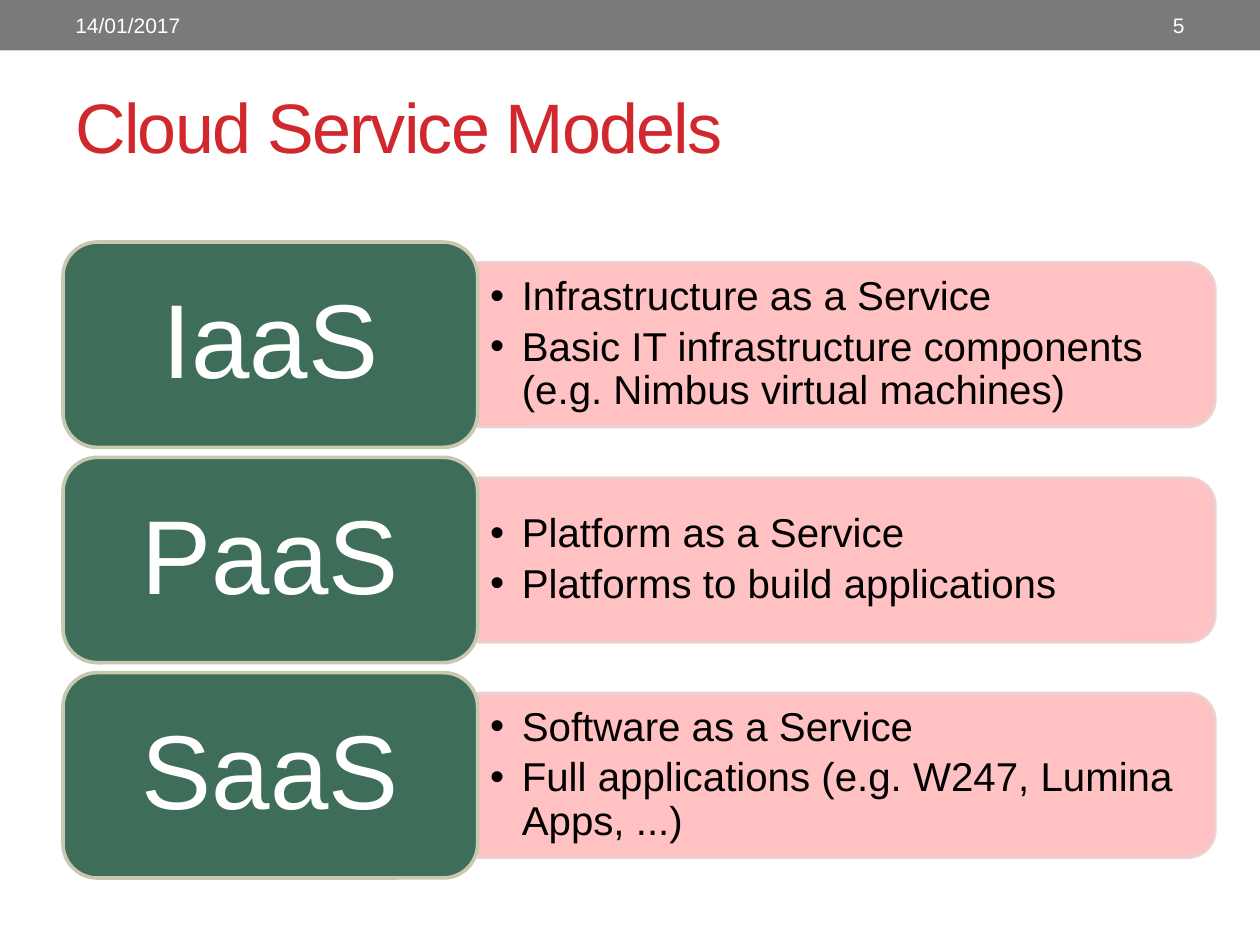
from lxml import etree
from pptx import Presentation
from pptx import util as u
from pptx.dml.color import RGBColor
from pptx.enum import shapes, text
from pptx.oxml.ns import qn

MODELS = [
    ("IaaS", ["Infrastructure as a Service",
              "Basic IT infrastructure components (e.g. Nimbus virtual machines)"]),
    ("PaaS", ["Platform as a Service", "Platforms to build applications"]),
    ("SaaS", ["Software as a Service",
              "Full applications (e.g. W247, Lumina Apps, ...)"]),
]


def color(hex_code):
    return RGBColor.from_string(hex_code)


def add_bullet(paragraph, indent):
    props = paragraph._p.get_or_add_pPr()
    props.set("marL", str(indent))
    props.set("indent", str(-indent))
    etree.SubElement(props, qn("a:buFont")).set("typeface", "Arial")
    etree.SubElement(props, qn("a:buChar")).set("char", "•")


def write(shape, lines, size, ink, align=text.PP_ALIGN.LEFT, insets=(0.25, 0.13),
          line_spacing=1.0, after=0, bullets=False, tracking=None):
    """Fill a shape with one paragraph per line."""
    frame = shape.text_frame
    frame.word_wrap = True
    frame.auto_size = text.MSO_AUTO_SIZE.NONE
    frame.vertical_anchor = text.MSO_ANCHOR.MIDDLE
    frame.margin_left = frame.margin_right = u.Cm(insets[0])
    frame.margin_top = frame.margin_bottom = u.Cm(insets[1])
    for index, line in enumerate(lines):
        paragraph = frame.add_paragraph() if index else frame.paragraphs[0]
        paragraph.alignment = align
        paragraph.line_spacing = line_spacing
        paragraph.space_before = u.Pt(0)
        paragraph.space_after = u.Pt(after)
        if bullets:
            add_bullet(paragraph, u.Cm(0.64))
        run = paragraph.add_run()
        run.text = line
        run.font.name = "Arial"
        run.font.size = u.Pt(size)
        run.font.color.rgb = color(ink)
        if tracking is not None:
            run.font._element.set("spc", str(tracking))


class Deck:
    """Style of the deck and the slide being built."""
    bar, accent, green, pink = "7A7A7A", "D1282E", "3E6E5A", "FFC1C1"
    green_edge, pink_edge, light, dark = "C8C8B1", "EECDCD", "FFFFFF", "000000"

    def __init__(self):
        self.prs = Presentation()
        self.prs.slide_width, self.prs.slide_height = u.Cm(25.4), u.Cm(19.05)
        self.slide = self.prs.slides.add_slide(self.prs.slide_layouts[5])

    def title(self, words, *box):
        title = self.slide.shapes.title
        title.left, title.top, title.width, title.height = map(u.Cm, box)
        write(title, [words], 40, self.accent, tracking=-100)

    def label(self, lines, *box, **style):
        write(self.slide.shapes.add_textbox(*map(u.Cm, box)), lines, **style)

    def block(self, preset, fill, edge, *box):
        block = self.slide.shapes.add_shape(preset, *map(u.Cm, box))
        block.shadow.inherit = False
        block.fill.solid()
        block.fill.fore_color.rgb = color(fill)
        if edge:
            block.line.color.rgb = color(edge)
            block.line.width = u.Pt(2.08)
        else:
            block.line.fill.background()
        return block

    def panel(self, left, middle, width, height):
        """Bar rounded on its right side: a top-rounded shape turned by 90 degrees."""
        center = left + width / 2
        panel = self.block(shapes.MSO_SHAPE.ROUND_2_SAME_RECTANGLE, self.pink,
                           self.pink_edge, center - height / 2,
                           middle - width / 2, height, width)
        panel.rotation = 90
        edge = panel.line._ln.find(".//" + qn("a:srgbClr"))
        etree.SubElement(edge, qn("a:alpha")).set("val", "90000")

    def model(self, name, points, top):
        name_left, name_width, name_height = 1.27, 8.36, 4.14
        panel_left = name_left + name_width
        middle = top + name_height / 2
        self.panel(panel_left, middle, 14.86, 3.3)
        self.label(points, panel_left, middle - 1.5, 14.68, 3, size=23, ink=self.dark,
                   line_spacing=0.9, after=4, bullets=True)
        tile = self.block(shapes.MSO_SHAPE.ROUNDED_RECTANGLE, self.green,
                          self.green_edge, name_left, top, name_width, name_height)
        write(tile, [name], 60, self.light, align=text.PP_ALIGN.CENTER,
              insets=(0.84, 0.5), line_spacing=0.9)


def main():
    deck = Deck()

    # Header bar with date and page number
    deck.block(shapes.MSO_SHAPE.RECTANGLE, deck.bar, None, 0, 0, 25.4, 1.02)
    deck.label(["14/01/2017"], 1.27, 0.05, 8.05, 0.91, size=12, ink=deck.light)
    deck.label(["5"], 21.16, 0.05, 2.97, 0.91, size=12, ink=deck.light,
               align=text.PP_ALIGN.RIGHT)

    deck.title("Cloud Service Models", 1.27, 1.17, 22.86, 2.74)

    # One row per service model
    first_top, pitch = 4.88, 4.34
    for row, (name, points) in enumerate(MODELS):
        deck.model(name, points, first_top + row * pitch)

    deck.prs.save("out.pptx")


if __name__ == "__main__":
    main()
